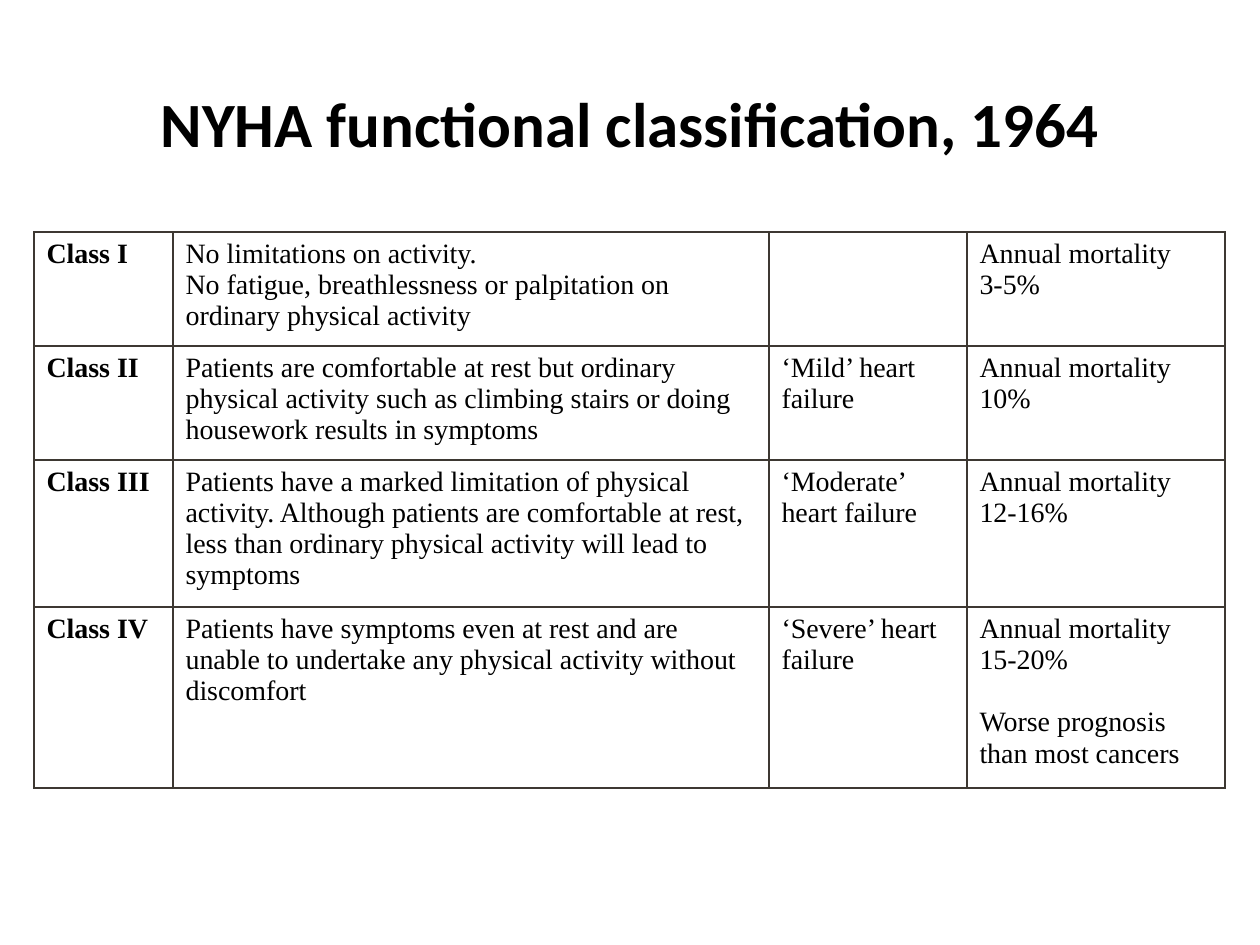
from lxml import etree
from pptx import Presentation
from pptx.dml.color import RGBColor
from pptx.enum.text import MSO_ANCHOR, PP_ALIGN
from pptx.oxml.ns import qn
from pptx.util import Emu, Pt

CENTER = PP_ALIGN.CENTER
MIDDLE = MSO_ANCHOR.MIDDLE
BLACK = RGBColor(0x00, 0x00, 0x00)
WHITE = RGBColor(0xFF, 0xFF, 0xFF)
BORDER = RGBColor(0x3D, 0x38, 0x32)

EMU_PER_PX = 914400 / 126
TITLE_ONLY_LAYOUT = 5

COLUMN_WIDTHS = [139, 596, 198, 258]
ROW_HEIGHTS = [114, 114, 147, 181]

# Each cell is a list of paragraphs
CLASSES = [
    [["Class I"],
     ["No limitations on activity.",
      "No fatigue, breathlessness or palpitation on ordinary physical activity"],
     [],
     ["Annual mortality\n3-5%"]],
    [["Class II"],
     ["Patients are comfortable at rest but ordinary physical activity such as "
      "climbing stairs or doing housework results in symptoms"],
     ["‘Mild’ heart failure"],
     ["Annual mortality 10%"]],
    [["Class III"],
     ["Patients have a marked limitation of physical activity. Although patients "
      "are comfortable at rest, less than ordinary physical activity will lead "
      "to symptoms"],
     ["‘Moderate’ heart failure"],
     ["Annual mortality 12-16%"]],
    [["Class IV"],
     ["Patients have symptoms even at rest and are unable to undertake any "
      "physical activity without discomfort"],
     ["‘Severe’ heart failure"],
     ["Annual mortality 15-20%", "Worse prognosis than most cancers"]],
]


def px(length):
    return Emu(round(length * EMU_PER_PX))


class SlideBuilder:
    title_font, title_size = "Calibri", 36
    table_font, table_size = "Times New Roman", 16

    def __init__(self, slide):
        self.slide = slide

    def style(self, paragraph, name, size, bold):
        font = paragraph.font
        font.name, font.size, font.bold = name, Pt(size), bold
        font.color.rgb = BLACK

    def title(self, text, left, top, width, height):
        shape = self.slide.shapes.title
        shape.left, shape.top = px(left), px(top)
        shape.width, shape.height = px(width), px(height)
        frame = shape.text_frame
        frame.text = text
        frame.vertical_anchor = MIDDLE
        paragraph = frame.paragraphs[0]
        paragraph.alignment = CENTER
        self.style(paragraph, self.title_font, self.title_size, True)

    def borders(self, cell):
        properties = cell._tc.get_or_add_tcPr()
        for position, side in enumerate(("a:lnL", "a:lnR", "a:lnT", "a:lnB")):
            line = etree.Element(qn(side), w=str(Pt(1)))
            fill = etree.SubElement(line, qn("a:solidFill"))
            etree.SubElement(fill, qn("a:srgbClr"), val=str(BORDER))
            properties.insert(position, line)

    def cell(self, cell, texts, bold):
        cell.fill.solid()
        cell.fill.fore_color.rgb = WHITE
        self.borders(cell)
        frame = cell.text_frame
        for index, text in enumerate(texts):
            paragraph = frame.add_paragraph() if index else frame.paragraphs[0]
            paragraph.text = text
            self.style(paragraph, self.table_font, self.table_size, bold)

    def table(self, rows, left, top, widths, heights):
        table = self.slide.shapes.add_table(
            len(heights), len(widths), px(left), px(top),
            px(sum(widths)), px(sum(heights))).table
        table.first_row = table.horz_banding = False
        for column, width in zip(table.columns, widths):
            column.width = px(width)
        for row, height in zip(table.rows, heights):
            row.height = px(height)
        for row_index, row in enumerate(rows):
            for column_index, texts in enumerate(row):
                self.cell(table.cell(row_index, column_index), texts,
                          bold=column_index == 0)
        return table


def main():
    presentation = Presentation()
    presentation.slide_width, presentation.slide_height = px(1260), px(945)
    layout = presentation.slide_layouts[TITLE_ONLY_LAYOUT]
    builder = SlideBuilder(presentation.slides.add_slide(layout))

    # Heading
    builder.title("NYHA functional classification, 1964", 0, 43, 1260, 158)

    # Classification table
    table = builder.table(CLASSES, 34, 232, COLUMN_WIDTHS, ROW_HEIGHTS)

    # One line of space above the prognosis remark
    prognosis = table.cell(3, 3).text_frame.paragraphs[-1]
    prognosis.space_before = Pt(18)

    presentation.save("out.pptx")


if __name__ == "__main__":
    main()
